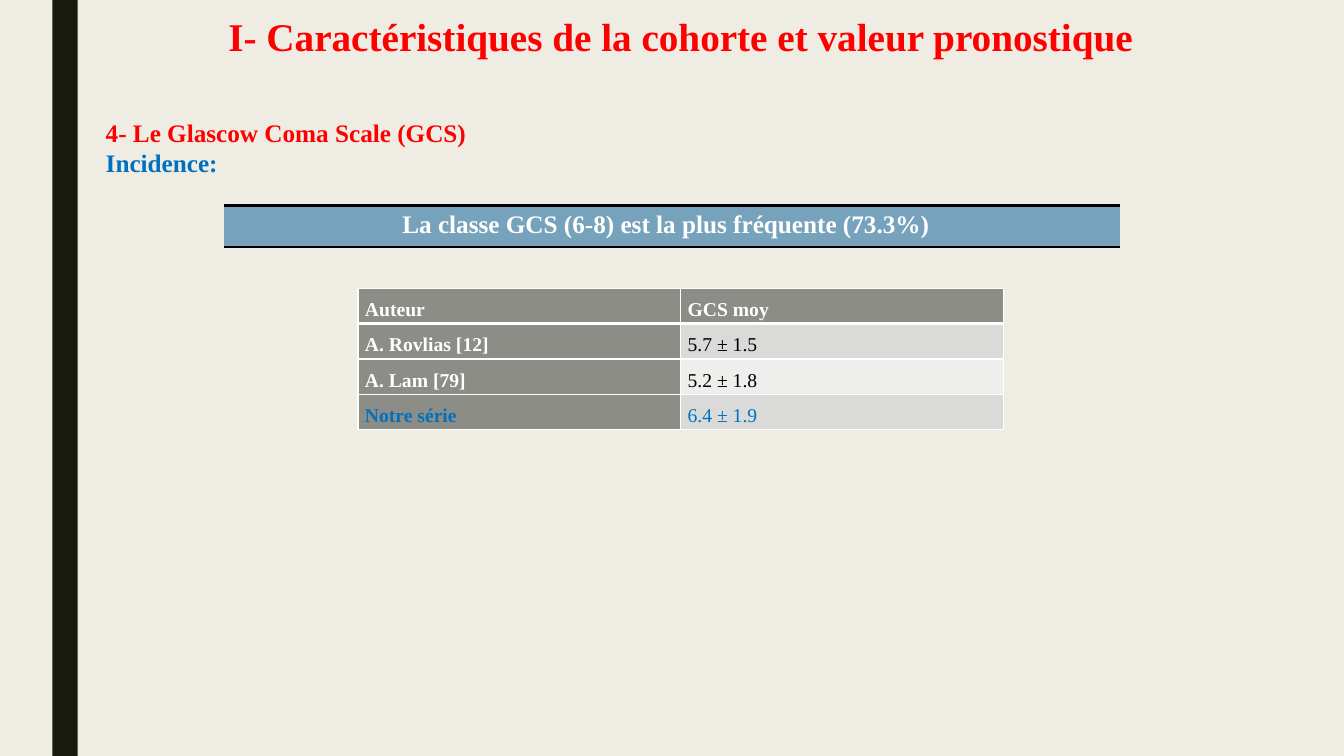
from typing import NamedTuple

from lxml import etree
from pptx import Presentation
from pptx.dml.color import RGBColor
from pptx.enum.shapes import MSO_SHAPE
from pptx.enum.text import MSO_ANCHOR, MSO_AUTO_SIZE, PP_ALIGN
from pptx.oxml.ns import qn
from pptx.util import Inches, Pt

RECT = MSO_SHAPE.RECTANGLE
MIDDLE = MSO_ANCHOR.MIDDLE
FIT_SHAPE = MSO_AUTO_SIZE.SHAPE_TO_FIT_TEXT
CENTER, JUSTIFY = PP_ALIGN.CENTER, PP_ALIGN.JUSTIFY

FONT = "Times New Roman"
RED, BLUE, WHITE, BLACK = "FF0000", "0070C0", "FFFFFF", "000000"
GREY, BAND_DARK, BAND_LIGHT = "8C8D86", "DADBD9", "EEEEED"


class Style(NamedTuple):
    size: float
    color: str
    bold: bool = True


class Border(NamedTuple):
    color: str
    width: float


class Author(NamedTuple):
    name: str
    score: str
    name_color: str
    score_color: str
    band: str


AUTHORS = [
    Author("Auteur", "GCS moy", WHITE, WHITE, GREY),
    Author("A. Rovlias [12]", "5.7 ± 1.5", WHITE, BLACK, BAND_DARK),
    Author("A. Lam [79]", "5.2 ± 1.8", WHITE, BLACK, BAND_LIGHT),
    Author("Notre série", "6.4 ± 1.9", BLUE, BLUE, BAND_DARK),
]


def rgb(color: str) -> RGBColor:
    return RGBColor.from_string(color)


def write(p, text: str, style: Style, **paragraph_format) -> None:
    """Add one formatted run to a paragraph."""
    for name, value in paragraph_format.items():
        setattr(p, name, value)
    r = p.add_run()
    r.text = text
    font = {"name": FONT, "size": Pt(style.size), "bold": style.bold}
    for name, value in font.items():
        setattr(r.font, name, value)
    r.font.color.rgb = rgb(style.color)


def set_borders(cell, **sides) -> None:
    """Draw the L, R, T and B borders of a cell; None hides a side."""
    tc_pr = cell._tc.get_or_add_tcPr()
    for side in "LRTB":
        border = sides.get(side)
        width = Pt(border.width) if border else 0
        ln = etree.SubElement(tc_pr, qn(f"a:ln{side}"), w=str(width))
        if border:
            fill = etree.SubElement(ln, qn("a:solidFill"))
            etree.SubElement(fill, qn("a:srgbClr"), val=border.color)
        else:
            etree.SubElement(ln, qn("a:noFill"))


def fill_cell(cell, color: str, **margins: float) -> None:
    cell.fill.solid()
    cell.fill.fore_color.rgb = rgb(color)
    for side, value in margins.items():
        setattr(cell, f"margin_{side}", Inches(value))


def add_table(slide, rows: int, cols: int, left: float, top: float,
              width: float, row_height: float):
    frame = slide.shapes.add_table(
        rows, cols, Inches(left), Inches(top), Inches(width),
        Inches(rows * row_height))
    table = frame.table
    table.first_row = table.horz_banding = False
    return table


def add_heading(slide) -> None:
    title = slide.shapes.title
    box = {"left": 1.5, "top": 0.1, "width": 10.5, "height": 0.58}
    for name, value in box.items():
        setattr(title, name, Inches(value))
    tf = title.text_frame
    tf.vertical_anchor = MIDDLE
    write(tf.paragraphs[0], "I- Caractéristiques de la cohorte et valeur pronostique",
          Style(28, RED), alignment=CENTER, line_spacing=0.89)


def add_subheading(slide) -> None:
    sp = slide.shapes.add_textbox(Inches(0.95), Inches(1.11), Inches(3.81), Inches(0.71))
    tf = sp.text_frame
    tf.word_wrap = False
    tf.auto_size = FIT_SHAPE
    write(tf.paragraphs[0], "4- Le Glascow Coma Scale (GCS)", Style(18, RED))
    write(tf.add_paragraph(), "Incidence:", Style(18, BLUE))


def add_banner(slide) -> None:
    cell = add_table(slide, 1, 1, 2.22, 2.04, 8.89, 0.41).cell(0, 0)
    rule = Border(BLACK, 2)
    set_borders(cell, T=rule, B=rule)
    fill_cell(cell, "77A2BB", right=0.22)
    write(cell.text_frame.paragraphs[0],
          "La classe GCS (6-8) est la plus fréquente (73.3%)",
          Style(18, WHITE), alignment=CENTER)


def add_authors(slide) -> None:
    table = add_table(slide, len(AUTHORS), 2, 3.55, 2.86, 6.4, 0.35)
    thin, thick = Border(WHITE, 1), Border(WHITE, 3)
    for i, author in enumerate(AUTHORS):
        columns = [(author.name, author.name_color, GREY, True),
                   (author.score, author.score_color, author.band, i == 0)]
        for j, (text, color, fill, bold) in enumerate(columns):
            cell = table.cell(i, j)
            set_borders(cell, L=thin, R=thin, T=thick if i == 1 else thin,
                        B=thick if i == 0 else thin)
            fill_cell(cell, fill, left=0.07, right=0.07, top=0, bottom=0)
            write(cell.text_frame.paragraphs[0], text, Style(14, color, bold),
                  alignment=JUSTIFY, line_spacing=1.5)


def main() -> None:
    prs = Presentation()
    prs.slide_width, prs.slide_height = Inches(13.33), Inches(7.5)
    slide = prs.slides.add_slide(prs.slide_layouts[5])

    # Background and side bar
    background = slide.background.fill
    background.solid()
    background.fore_color.rgb = rgb("EFEDE3")
    bar = slide.shapes.add_shape(RECT, Inches(0.52), 0, Inches(0.25), prs.slide_height)
    bar.shadow.inherit = False
    bar.fill.solid()
    bar.fill.fore_color.rgb = rgb("191B0E")
    bar.line.fill.background()

    # Headings
    add_heading(slide)
    add_subheading(slide)

    # Key result and comparison with other series
    add_banner(slide)
    add_authors(slide)

    prs.save("out.pptx")


if __name__ == "__main__":
    main()
